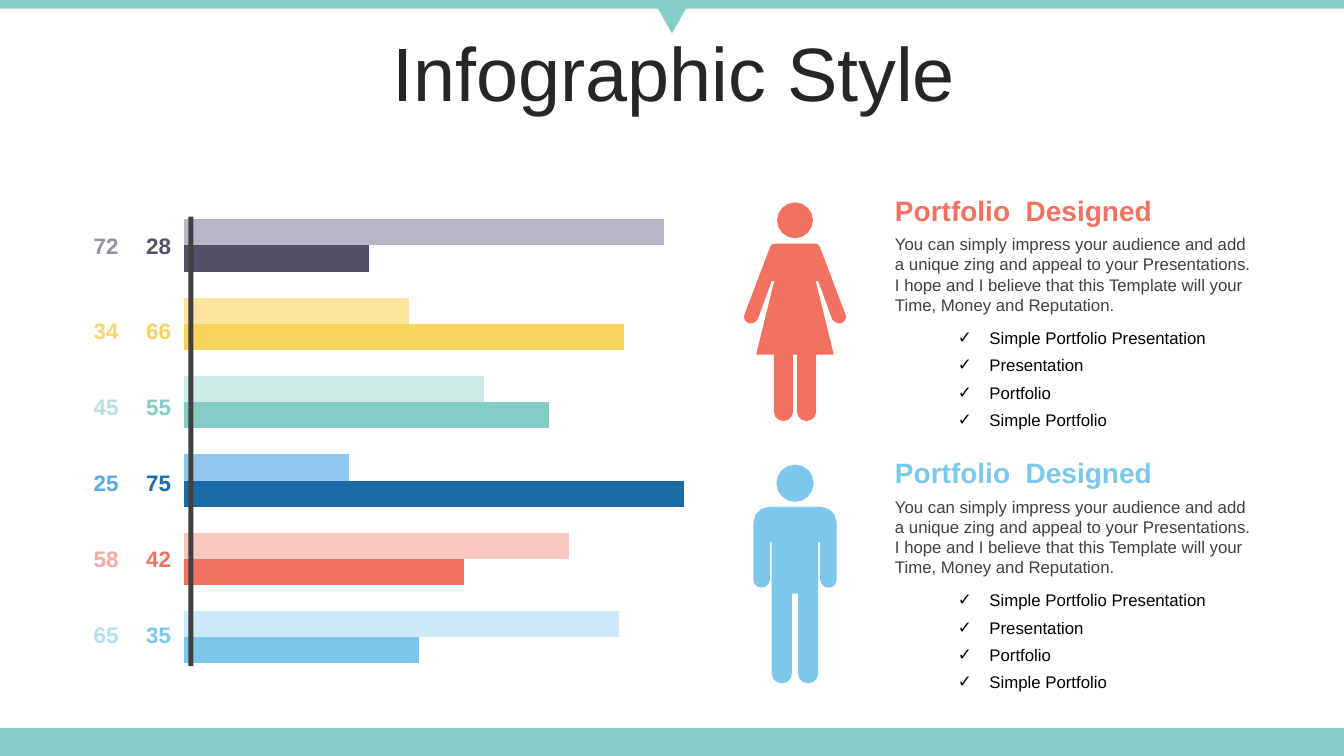
import math
from dataclasses import dataclass
from typing import NamedTuple

import lxml.etree
import pptx
import pptx.chart.data
import pptx.dml.color
import pptx.enum.chart
import pptx.enum.shapes
import pptx.enum.text
import pptx.oxml.ns
import pptx.util

Pt = pptx.util.Pt
RGB = pptx.dml.color.RGBColor.from_string
SHAPE = pptx.enum.shapes.MSO_SHAPE
ANCHOR = pptx.enum.text.MSO_ANCHOR
ALIGN = pptx.enum.text.PP_ALIGN
qn = pptx.oxml.ns.qn


@dataclass(frozen=True)
class Theme:
    font: str = "Arial"
    teal: str = "84CCC6"
    coral: str = "F27161"
    sky: str = "7CC8EC"
    title: str = "262626"
    body: str = "404040"
    item: str = "000000"
    title_size: float = 54
    heading_size: float = 20
    label_size: float = 16
    body_size: float = 12
    chart_size: float = 18


T = Theme()


class Box(NamedTuple):
    left: float
    top: float
    width: float
    height: float


class BarPair(NamedTuple):
    """One chart category: a pale and a strong bar, with the labels beside them."""
    pale_label: str
    strong_label: str
    pale_value: int
    strong_value: int
    pale_color: str
    strong_color: str
    pale_label_color: str
    label_top: float


class Figure(NamedTuple):
    """Right half of a figure, measured from its centre line and top.

    A step of one point is a line, a step of three points a Bezier curve.
    """
    head_radius: float
    steps: list


class Panel(NamedTuple):
    top: float
    color: str
    figure: Figure


PAIRS = [  # bottom to top
    BarPair("65", "35", 87, 47, "CBE9F7", T.sky, "B2DDF2", 439.9),
    BarPair("58", "42", 77, 56, "FAC6C0", T.coral, "F7AAA0", 385.9),
    BarPair("25", "75", 33, 100, "91C7EE", "1A6BA5", "5AABE5", 331.6),
    BarPair("45", "55", 60, 73, "CEEBE8", T.teal, "B5E0DD", 277.2),
    BarPair("34", "66", 45, 88, "FBE59E", "F8D45E", "F5D672", 223.2),
    BarPair("72", "28", 96, 37, "B7B6C6", "525168", "9291AA", 162.4),
]
WOMAN = Figure(12.8, [
    [(13.5, 29.5)], [(16.5, 29.5), (17, 30), (18, 32.4)], [(36, 79.9)],
    [(37.4, 82.1), (36, 85), (33.1, 86.4)], [(31, 87.1), (28.1, 85.7), (26.6, 83.5)],
    [(16.6, 56.2)], [(14.8, 56.2)], [(27.7, 108.7)], [(15.1, 108.7)], [(15.1, 149.8)],
    [(15.1, 153.4), (11.5, 156.2), (8.3, 156.2)],
    [(4.6, 156.2), (1.5, 153.4), (1.5, 149.8)], [(1.5, 108.7)],
])
MAN = Figure(13.3, [
    [(18.7, 30.2)], [(24.5, 30.2), (29.7, 35.3), (29.7, 41)], [(29.7, 82.1)],
    [(29.7, 85.7), (27.4, 87.8), (23.8, 87.8)], [(20.9, 87.8), (18, 85.7), (18, 82.1)],
    [(18, 55.4)], [(16.6, 55.4)], [(16.6, 149)],
    [(16.6, 153.4), (13.7, 156.2), (9.4, 156.2)],
    [(5, 156.2), (2.2, 153.4), (2.2, 149)], [(2.2, 92.2)],
])
PANELS = [Panel(135.1, T.coral, WOMAN), Panel(322.4, T.sky, MAN)]
BODY = ("You can simply impress your audience and add a unique zing and appeal to your "
        "Presentations. I hope and I believe that this Template will your Time, Money "
        "and Reputation.")
ITEMS = ["Simple Portfolio Presentation", "Presentation", "Portfolio", "Simple Portfolio"]
FIGURE_CENTRE = 567.9


def paint(sp, color: str) -> None:
    sp.fill.solid()
    sp.fill.fore_color.rgb = RGB(color)
    sp.line.fill.background()
    sp.shadow.inherit = False


def add_block(s, kind, box: Box, color: str, rotation: float = 0) -> None:
    sp = s.shapes.add_shape(kind, *map(Pt, box))
    sp.rotation = rotation
    paint(sp, color)


def add_text(s, box: Box, text: str, size: float, color: str, bold: bool = False,
             anchor=ANCHOR.TOP, spacing: float = 1.0, before: float = 0, inset: float = 7.2):
    tf = s.shapes.add_textbox(*map(Pt, box)).text_frame
    tf.word_wrap = True
    tf.vertical_anchor = anchor
    tf.margin_left = tf.margin_right = Pt(inset)
    p = tf.paragraphs[0]
    p.line_spacing = spacing
    p.space_before = Pt(before)
    r = p.add_run()
    r.text = text
    r.font.name, r.font.size, r.font.bold = T.font, Pt(size), bold
    r.font.color.rgb = RGB(color)
    return p


def add_check(p) -> None:
    pPr = p._p.get_or_add_pPr()
    pPr.set("marL", str(Pt(22.5)))
    pPr.set("indent", str(Pt(-22.5)))
    lxml.etree.SubElement(pPr, qn("a:buFont")).set("typeface", T.font)
    lxml.etree.SubElement(pPr, qn("a:buChar")).set("char", "✓")


def add_bars(s, box: Box) -> None:
    data = pptx.chart.data.CategoryChartData()
    data.categories = [str(i) for i in range(1, len(PAIRS) + 1)]
    data.add_series("Series 1", [b.strong_value for b in PAIRS])
    data.add_series("Series 2", [b.pale_value for b in PAIRS])
    chart = s.shapes.add_chart(pptx.enum.chart.XL_CHART_TYPE.BAR_CLUSTERED,
                               *map(Pt, box), data).chart
    chart.has_legend = chart.has_title = False
    chart.font.name, chart.font.size = T.font, Pt(T.chart_size)
    chart.font.color.rgb = RGB(T.item)
    axis = chart.value_axis
    axis.minimum_scale, axis.maximum_scale = 0, 100
    axis.has_major_gridlines = False
    axis.visible = chart.category_axis.visible = False
    plot = chart.plots[0]
    plot.gap_width, plot.overlap, plot.vary_by_categories = 100, 0, False
    colors = [[b.strong_color for b in PAIRS], [b.pale_color for b in PAIRS]]
    for series, row in zip(plot.series, colors):
        series.invert_if_negative = False
        for i, color in enumerate(row):
            fill = series.points[i].format.fill
            fill.solid()
            fill.fore_color.rgb = RGB(color)
    set_plot_layout(chart, {"x": 0.02, "y": 0.02, "w": 0.9, "h": 0.96})


def set_plot_layout(chart, fractions: dict[str, float]) -> None:
    area = chart._chartSpace.find(".//" + qn("c:plotArea"))
    for old in area.findall(qn("c:layout")):
        area.remove(old)
    layout = lxml.etree.Element(qn("c:layout"))
    area.insert(0, layout)
    manual = lxml.etree.SubElement(layout, qn("c:manualLayout"))
    values = {"layoutTarget": "inner", "xMode": "edge", "yMode": "edge", **fractions}
    for tag, value in values.items():
        lxml.etree.SubElement(manual, qn("c:" + tag)).set("val", str(value))


def flatten(steps: list, parts: int = 3) -> list[tuple[float, float]]:
    """Turn lines and Bezier curves into one list of points."""
    points = []
    for step in steps:
        if len(step) == 1:
            points += step
            continue
        curve = [points[-1], *step]
        for k in range(1, parts + 1):
            t = k / parts
            weights = [math.comb(3, i) * t**i * (1 - t)**(3 - i) for i in range(4)]
            points.append(tuple(sum(w * q[d] for w, q in zip(weights, curve))
                                for d in (0, 1)))
    return points


def add_figure(s, figure: Figure, top: float, color: str) -> None:
    half = flatten(figure.steps)
    body = half + [(-x, y) for x, y in reversed(half)]
    radius = figure.head_radius
    angles = [math.tau * k / 16 for k in range(16)]
    head = [(radius * math.cos(a), radius + radius * math.sin(a)) for a in angles]
    body, head = ([(Pt(FIGURE_CENTRE + x), Pt(top + y)) for x, y in c] for c in (body, head))
    outline = s.shapes.build_freeform(*body[0])
    outline.add_line_segments(body[1:])
    outline.move_to(*head[0])
    outline.add_line_segments(head[1:])
    paint(outline.convert_to_shape(), color)


def add_panel(s, panel: Panel) -> None:
    top = panel.top
    add_figure(s, panel.figure, top + 9.5, panel.color)
    add_text(s, Box(632.2, top, 269.3, 28), "Portfolio  Designed", T.heading_size,
             panel.color, True, ANCHOR.MIDDLE, 1.1, 4)
    add_text(s, Box(632.2, top + 28.5, 269.3, 65.5), BODY, T.body_size, T.body)
    for i, item in enumerate(ITEMS):
        add_check(add_text(s, Box(677.2, top + 98.3 + 19.5 * i, 196.6, 18.7), item,
                           T.body_size, T.item, anchor=ANCHOR.MIDDLE, spacing=0.8))


def main() -> None:
    prs = pptx.Presentation()
    prs.slide_width, prs.slide_height = Pt(960), Pt(540)
    s = prs.slides.add_slide(prs.slide_layouts[6])
    add_block(s, SHAPE.RECTANGLE, Box(0, 520, 960, 20), T.teal)
    add_block(s, SHAPE.RECTANGLE, Box(0, 0, 960, 6.2), T.teal)
    add_block(s, SHAPE.ISOSCELES_TRIANGLE, Box(466.4, 0, 27.2, 23.8), T.teal, 180)
    title = add_text(s, Box(25.6, 26.6, 911.5, 56.9), "Infographic Style", T.title_size,
                     T.title, anchor=ANCHOR.MIDDLE, spacing=0.9, before=10)
    title.alignment = ALIGN.CENTER
    add_bars(s, Box(123.8, 140.4, 396.7, 349.9))
    for b in PAIRS:
        for left, text, color in ((58.3, b.pale_label, b.pale_label_color),
                                  (95.8, b.strong_label, b.strong_color)):
            add_text(s, Box(left, b.label_top, 38.9, 26.6), text, T.label_size, color,
                     True, inset=8.6)
    add_block(s, SHAPE.RECTANGLE, Box(134.6, 154.8, 3.6, 321.1), T.body)
    for panel in PANELS:
        add_panel(s, panel)
    prs.save("out.pptx")


if __name__ == "__main__":
    main()
